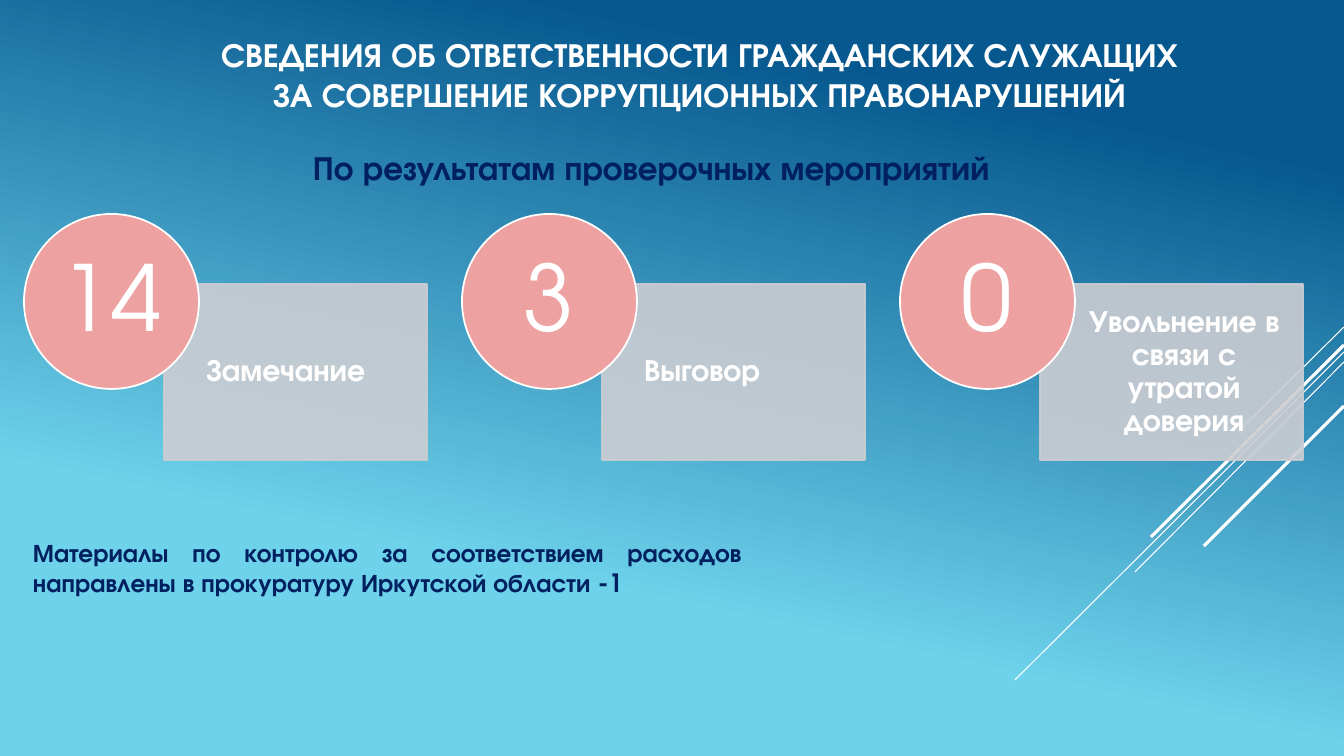
from dataclasses import dataclass

from lxml import etree
from pptx import Presentation
from pptx.dml.color import RGBColor
from pptx.enum.shapes import MSO_CONNECTOR, MSO_SHAPE
from pptx.enum.text import MSO_ANCHOR, PP_ALIGN
from pptx.oxml.ns import qn
from pptx.util import Emu, Pt

LEFT, CENTER, JUSTIFY = PP_ALIGN.LEFT, PP_ALIGN.CENTER, PP_ALIGN.JUSTIFY
TOP, MIDDLE = MSO_ANCHOR.TOP, MSO_ANCHOR.MIDDLE
RECTANGLE, OVAL = MSO_SHAPE.RECTANGLE, MSO_SHAPE.OVAL
STRAIGHT = MSO_CONNECTOR.STRAIGHT

EMU_PER_PX = 914400 / 100.8
SLIDE_WIDTH, SLIDE_HEIGHT = 1344, 756


@dataclass(frozen=True)
class Theme:
    font: str = "TeX Gyre Adventor"
    sky_dark: str = "06588E"
    sky_light: str = "6ED2EB"
    white: str = "FFFFFF"
    navy: str = "002060"
    card: str = "CCCDD2"
    badge: str = "EEA1A1"
    heading_size: int = 24
    label_size: int = 22
    count_size: int = 65
    note_size: int = 18


THEME = Theme()

# Right end y, left end x, left end y, width in points
RAYS = [
    (327, 1243, 427, 0.75),
    (352, 1015, 680, 0.75),
    (362, 1135, 572, 0.75),
    (345, 1151, 537, 2.25),
    (406, 1204, 546, 2.25),
]

PENALTIES = [
    ("14", "Замечание", LEFT),
    ("3", "Выговор", LEFT),
    ("0", "Увольнение в связи с утратой доверия", CENTER),
]
PENALTY_LEFT, PENALTY_PITCH = 24, 438


def px(length):
    return Emu(round(length * EMU_PER_PX))


def color(value):
    return RGBColor.from_string(value)


def paint_background(slide):
    fill = slide.background.fill
    fill.gradient()
    fill.gradient_angle = 360 - 102
    stops = [(0.16, THEME.sky_dark), (0.72, THEME.sky_light)]
    for stop, (position, value) in zip(fill.gradient_stops, stops):
        stop.position = position
        stop.color.rgb = color(value)


def add_ray(slide, right_y, left_x, left_y, width):
    ray = slide.shapes.add_connector(
        STRAIGHT, px(SLIDE_WIDTH), px(right_y), px(left_x), px(left_y))
    ray.line.color.rgb = color(THEME.white)
    ray.line.width = Pt(width)
    etree.SubElement(ray._element.spPr, qn("a:effectLst"))


def add_text(slide, box, lines, size, ink, align=LEFT, bold=True, anchor=TOP,
             insets=(10, 5, 10, 5), wrap=True, compact=False):
    frame = slide.shapes.add_textbox(*map(px, box)).text_frame
    frame.word_wrap = wrap
    frame.vertical_anchor = anchor
    (frame.margin_left, frame.margin_top,
     frame.margin_right, frame.margin_bottom) = map(px, insets)
    frame.text = "\n".join(lines)
    for paragraph in frame.paragraphs:
        paragraph.alignment = align
        if compact:
            paragraph.line_spacing = 0.9
            paragraph.space_after = Pt(size * 0.35)
        for run in paragraph.runs:
            run.font.name = THEME.font
            run.font.size = Pt(size)
            run.font.bold = bold
            run.font.color.rgb = color(ink)


def add_panel(slide, kind, box, fill, line, opacity=100):
    panel = slide.shapes.add_shape(kind, *map(px, box))
    panel.shadow.inherit = False
    panel.fill.solid()
    panel.fill.fore_color.rgb = color(fill)
    panel.line.color.rgb = color(line)
    panel.line.width = Pt(1.25)
    if opacity < 100:
        for paint in panel._element.spPr.iter(qn("a:srgbClr")):
            etree.SubElement(paint, qn("a:alpha"), val=str(opacity * 1000))


def add_penalty(slide, left, count, label, align):
    # Card with its label
    add_panel(slide, RECTANGLE, (left + 140, 284, 263, 176),
              THEME.card, THEME.card, opacity=90)
    add_text(slide, (left + 182, 284, 221, 176), [label], THEME.label_size,
             THEME.white, align, anchor=MIDDLE, insets=(0, 17, 17, 17),
             compact=True)
    # Badge with the count
    add_panel(slide, OVAL, (left, 214, 175, 175), THEME.badge, THEME.white)
    add_text(slide, (left + 25, 240, 124, 124), [count], THEME.count_size,
             THEME.white, CENTER, bold=False, anchor=MIDDLE,
             insets=(0, 0, 0, 0), compact=True)


def main():
    deck = Presentation()
    deck.slide_width, deck.slide_height = px(SLIDE_WIDTH), px(SLIDE_HEIGHT)
    slide = deck.slides.add_slide(deck.slide_layouts[6])

    # Backdrop
    paint_background(slide)
    for ray in RAYS:
        add_ray(slide, *ray)

    # Headings
    add_text(slide, (68, 29, 1263, 92),
             ["СВЕДЕНИЯ ОБ ОТВЕТСТВЕННОСТИ ГРАЖДАНСКИХ СЛУЖАЩИХ",
              "ЗА СОВЕРШЕНИЕ КОРРУПЦИОННЫХ ПРАВОНАРУШЕНИЙ"],
             THEME.heading_size, THEME.white, CENTER)
    add_text(slide, (303, 142, 791, 50),
             ["По результатам проверочных мероприятий"],
             THEME.heading_size, THEME.navy, wrap=False)

    # Penalties
    for index, penalty in enumerate(PENALTIES):
        add_penalty(slide, PENALTY_LEFT + index * PENALTY_PITCH, *penalty)

    # Closing note
    add_text(slide, (23, 532, 729, 72),
             ["Материалы по контролю за соответствием расходов направлены "
              "в прокуратуру Иркутской области -1"],
             THEME.note_size, THEME.navy, JUSTIFY)

    deck.save("out.pptx")


if __name__ == "__main__":
    main()
